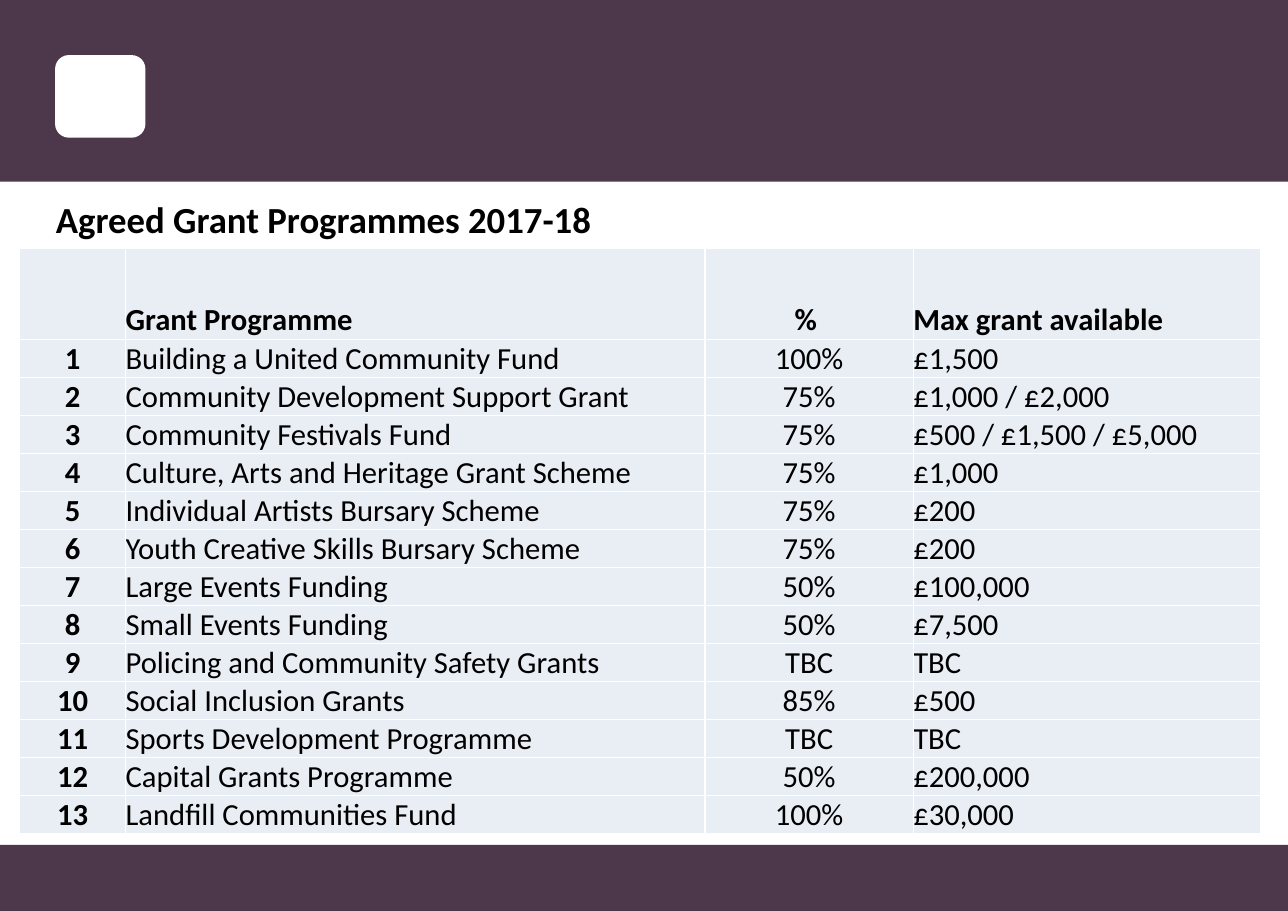
from lxml import etree
from pptx import Presentation
from pptx import util as u
from pptx.dml.color import RGBColor
from pptx.enum import shapes, text
from pptx.oxml.ns import qn

COLOURS = {"band": "4C374B", "white": "FFFFFF", "cell": "E9EDF4", "ink": "000000"}
WIDTH, HEIGHT = 11.69, 8.27


class GrantSlide:
    """Holds the style and the current slide."""

    font = "Calibri"

    def __init__(self, deck):
        self.slide = deck.slides.add_slide(deck.slide_layouts[6])

    def colour(self, name):
        return RGBColor.from_string(COLOURS[name])

    def block(self, kind, left, top, width, height, fill):
        block = self.slide.shapes.add_shape(kind, *map(u.Inches, (left, top, width, height)))
        block.shadow.inherit = False
        block.fill.solid()
        block.fill.fore_color.rgb = self.colour(fill)
        block.line.fill.background()

    def wording(self, frame, words, size, bold, align=text.PP_ALIGN.LEFT):
        frame.text = words
        paragraph = frame.paragraphs[0]
        paragraph.alignment = align
        for run in paragraph.runs:
            run.font.name = self.font
            run.font.size = u.Pt(size)
            run.font.bold = bold
            run.font.color.rgb = self.colour("ink")

    def heading(self, words, left, top, width, height):
        heading = self.slide.shapes.add_textbox(*map(u.Inches, (left, top, width, height)))
        heading.text_frame.word_wrap = True
        heading.text_frame.auto_size = text.MSO_AUTO_SIZE.SHAPE_TO_FIT_TEXT
        self.wording(heading.text_frame, words, 24, True)

    def borders(self, cell):
        properties = cell._tc.get_or_add_tcPr()
        for side in ("a:lnL", "a:lnR", "a:lnT", "a:lnB"):
            line = etree.SubElement(properties, qn(side), w=str(u.Pt(1)))
            fill = etree.SubElement(line, qn("a:solidFill"))
            etree.SubElement(fill, qn("a:srgbClr"), val=COLOURS["white"])

    def table(self, rows, left, top, height, header_height, widths, centred):
        grid = self.slide.shapes.add_table(
            len(rows), len(widths),
            *map(u.Inches, (left, top, sum(widths), height))).table
        grid.first_row = grid.horz_banding = False
        for column, width in zip(grid.columns, widths):
            column.width = u.Inches(width)
        row_height = (height - header_height) / (len(rows) - 1)
        for r, values in enumerate(rows):
            grid.rows[r].height = u.Inches(row_height if r else header_height)
            for c, value in enumerate(values):
                cell = grid.cell(r, c)
                self.borders(cell)
                cell.fill.solid()
                cell.fill.fore_color.rgb = self.colour("cell")
                cell.margin_left = cell.margin_right = 0
                cell.margin_top = cell.margin_bottom = 0
                cell.vertical_anchor = text.MSO_ANCHOR.BOTTOM
                align = text.PP_ALIGN.CENTER if c in centred else text.PP_ALIGN.LEFT
                self.wording(cell.text_frame, value, 20, r == 0 or c == 0, align)


PROGRAMMES = [
    ("Building a United Community Fund", "100%", "£1,500"),
    ("Community Development Support Grant", "75%", "£1,000 / £2,000"),
    ("Community Festivals Fund", "75%", "£500 / £1,500 / £5,000"),
    ("Culture, Arts and Heritage Grant Scheme", "75%", "£1,000"),
    ("Individual Artists Bursary Scheme", "75%", "£200"),
    ("Youth Creative Skills Bursary Scheme", "75%", "£200"),
    ("Large Events Funding", "50%", "£100,000"),
    ("Small Events Funding", "50%", "£7,500"),
    ("Policing and Community Safety Grants", "TBC", "TBC"),
    ("Social Inclusion Grants", "85%", "£500"),
    ("Sports Development Programme", "TBC", "TBC"),
    ("Capital Grants Programme", "50%", "£200,000"),
    ("Landfill Communities Fund", "100%", "£30,000"),
]


def main():
    deck = Presentation()
    deck.slide_width, deck.slide_height = u.Inches(WIDTH), u.Inches(HEIGHT)
    grants = GrantSlide(deck)

    # Header and footer bands, with a plain emblem
    kinds = shapes.MSO_SHAPE
    grants.block(kinds.RECTANGLE, 0, 0, WIDTH, 1.65, "band")
    grants.block(kinds.ROUNDED_RECTANGLE, 0.5, 0.5, 0.82, 0.75, "white")
    grants.block(kinds.RECTANGLE, 0, 7.67, WIDTH, HEIGHT - 7.67, "band")

    # Heading
    grants.heading("Agreed Grant Programmes 2017-18", 0.41, 1.74, 7.03, 0.5)

    # Numbered grant programmes
    rows = [("", "Grant Programme", "% ", "Max grant available")]
    rows += [(str(number), *programme) for number, programme in enumerate(PROGRAMMES, 1)]
    grants.table(rows, 0.18, 2.25, 5.32, 0.83, (0.96, 5.26, 1.89, 3.15), centred=(0, 2))

    deck.save("out.pptx")


if __name__ == "__main__":
    main()
